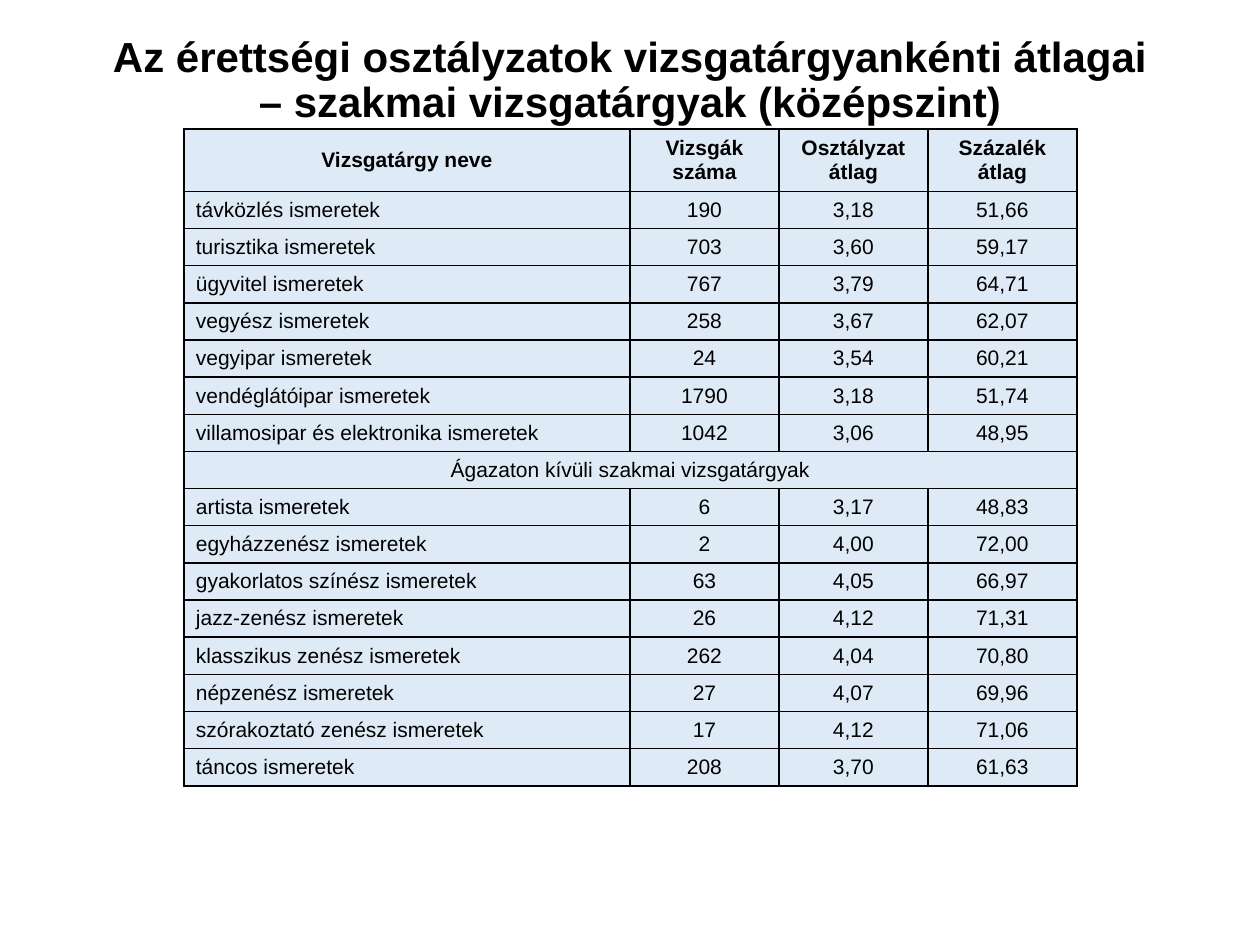
from lxml.etree import SubElement
from pptx import Presentation
from pptx.dml.color import RGBColor
from pptx.enum.text import MSO_ANCHOR, PP_ALIGN
from pptx.oxml.ns import qn
from pptx.util import Emu, Pt

PX_PER_INCH = 126
BLACK = RGBColor(0x00, 0x00, 0x00)
PALE_BLUE = RGBColor(0xDE, 0xEB, 0xF7)

TITLE = "Az érettségi osztályzatok vizsgatárgyankénti átlagai – szakmai vizsgatárgyak (középszint)"
COLUMN_WIDTHS = [446, 149, 149, 149]
HEADER_HEIGHT = 60
ROW_HEIGHT = 36
HEADER = ("Vizsgatárgy neve", "Vizsgák száma", "Osztályzat átlag", "Százalék átlag")
SECTION = ("Ágazaton kívüli szakmai vizsgatárgyak",)
SECTOR_SUBJECTS = [
    ("távközlés ismeretek", "190", "3,18", "51,66"),
    ("turisztika ismeretek", "703", "3,60", "59,17"),
    ("ügyvitel ismeretek", "767", "3,79", "64,71"),
    ("vegyész ismeretek", "258", "3,67", "62,07"),
    ("vegyipar ismeretek", "24", "3,54", "60,21"),
    ("vendéglátóipar ismeretek", "1790", "3,18", "51,74"),
    ("villamosipar és elektronika ismeretek", "1042", "3,06", "48,95"),
]
OTHER_SUBJECTS = [
    ("artista ismeretek", "6", "3,17", "48,83"),
    ("egyházzenész ismeretek", "2", "4,00", "72,00"),
    ("gyakorlatos színész ismeretek", "63", "4,05", "66,97"),
    ("jazz-zenész ismeretek", "26", "4,12", "71,31"),
    ("klasszikus zenész ismeretek", "262", "4,04", "70,80"),
    ("népzenész ismeretek", "27", "4,07", "69,96"),
    ("szórakoztató zenész ismeretek", "17", "4,12", "71,06"),
    ("táncos ismeretek", "208", "3,70", "61,63"),
]


def px(length):
    return Emu(round(length * 914400 / PX_PER_INCH))


def write_text(paragraph, text, size, bold, align):
    paragraph.text = text
    paragraph.alignment = align
    paragraph.font.name = "Arial"
    paragraph.font.size = Pt(size)
    paragraph.font.bold = bold
    paragraph.font.color.rgb = BLACK


def add_title(slide):
    title = slide.shapes.add_textbox(px(87), px(-10), px(1086), px(183))
    frame = title.text_frame
    frame.word_wrap = True
    frame.vertical_anchor = MSO_ANCHOR.MIDDLE
    heading = frame.paragraphs[0]
    write_text(heading, TITLE, 24, True, PP_ALIGN.CENTER)
    heading.line_spacing = 0.9


def add_borders(cell):
    properties = cell._tc.get_or_add_tcPr()
    for position, side in enumerate(("lnL", "lnR", "lnT", "lnB")):
        border = SubElement(properties, qn(f"a:{side}"), w=str(Pt(1)))
        properties.insert(position, border)
        fill = SubElement(border, qn("a:solidFill"))
        SubElement(fill, qn("a:srgbClr"), val=str(BLACK))


def style_cell(cell):
    cell.fill.solid()
    cell.fill.fore_color.rgb = PALE_BLUE
    cell.vertical_anchor = MSO_ANCHOR.MIDDLE
    cell.margin_left = cell.margin_right = px(12)
    cell.margin_top = cell.margin_bottom = px(6)
    add_borders(cell)


def add_averages_table(slide):
    rows = [HEADER, *SECTOR_SUBJECTS, SECTION, *OTHER_SUBJECTS]
    height = HEADER_HEIGHT + ROW_HEIGHT * (len(rows) - 1)
    averages = slide.shapes.add_table(
        len(rows), len(COLUMN_WIDTHS), px(184), px(129), px(sum(COLUMN_WIDTHS)), px(height)
    ).table
    for column, width in zip(averages.columns, COLUMN_WIDTHS):
        column.width = px(width)
    for r, values in enumerate(rows):
        averages.rows[r].height = px(HEADER_HEIGHT if values is HEADER else ROW_HEIGHT)
        for c in range(len(COLUMN_WIDTHS)):
            style_cell(averages.cell(r, c))
        if values is SECTION:
            averages.cell(r, 0).merge(averages.cell(r, len(COLUMN_WIDTHS) - 1))
        for c, value in enumerate(values):
            is_subject = c == 0 and values not in (HEADER, SECTION)
            align = PP_ALIGN.LEFT if is_subject else PP_ALIGN.CENTER
            paragraph = averages.cell(r, c).text_frame.paragraphs[0]
            write_text(paragraph, value, 12, values is HEADER, align)


def main():
    presentation = Presentation()
    presentation.slide_width = px(1260)
    presentation.slide_height = px(945)
    slide = presentation.slides.add_slide(presentation.slide_layouts[6])
    add_title(slide)
    add_averages_table(slide)
    presentation.save("out.pptx")


if __name__ == "__main__":
    main()
